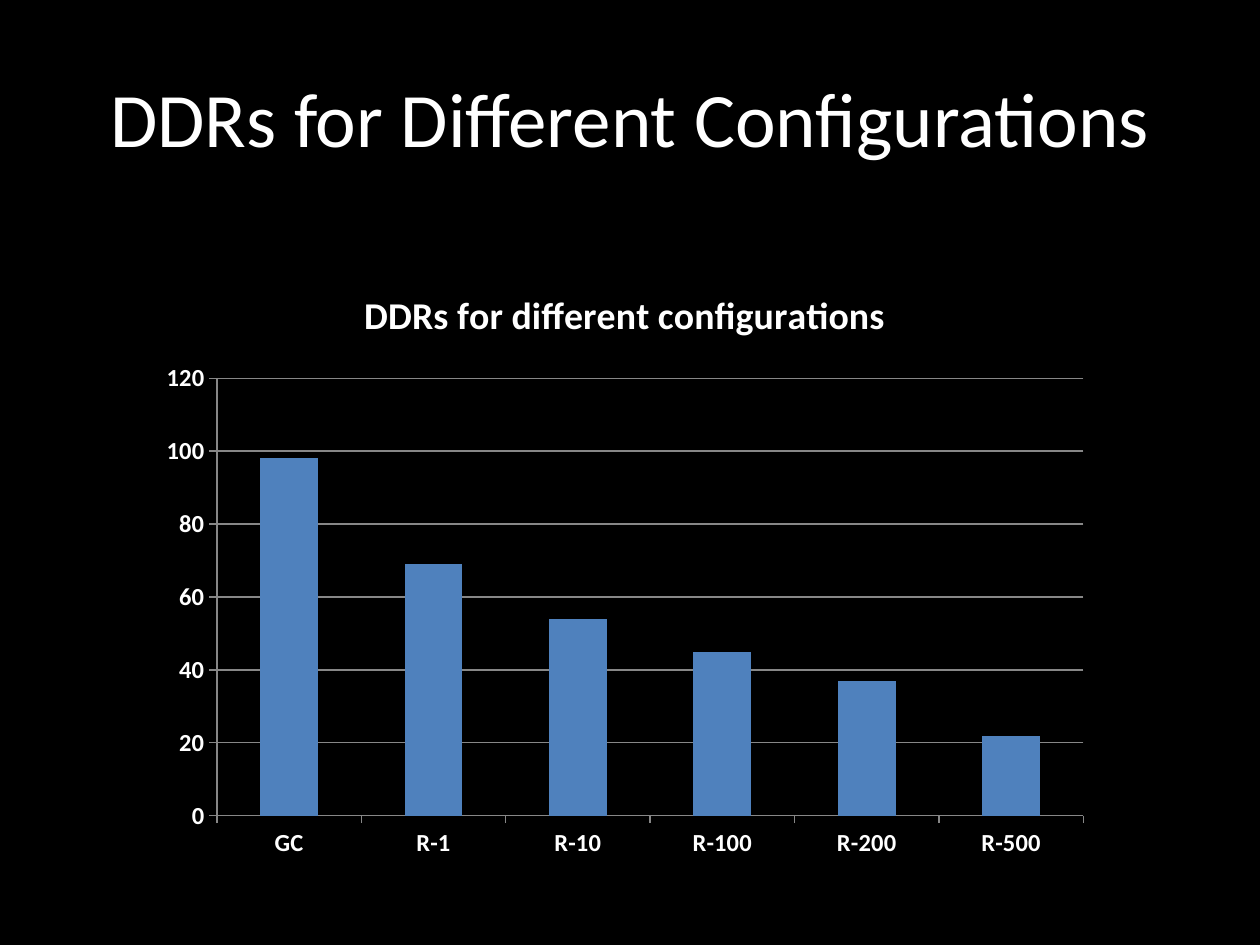
from pptx import Presentation
from pptx.chart.data import CategoryChartData
from pptx.dml.color import RGBColor
from pptx.enum.chart import XL_CHART_TYPE, XL_TICK_MARK
from pptx.enum.text import MSO_ANCHOR, PP_ALIGN
from pptx.util import Inches, Pt

COLUMNS = XL_CHART_TYPE.COLUMN_CLUSTERED
OUTSIDE = XL_TICK_MARK.OUTSIDE
CENTER, MIDDLE = PP_ALIGN.CENTER, MSO_ANCHOR.MIDDLE
FONT = "Calibri"
COLORS = {name: RGBColor.from_string(value) for name, value in {
    "back": "000000", "text": "FFFFFF", "bar": "4F81BD", "line": "878787"}.items()}


def style(font, size, bold):
    font.name, font.size, font.bold = FONT, Pt(size), bold
    font.color.rgb = COLORS["text"]


prs = Presentation()
prs.slide_width, prs.slide_height = Inches(10), Inches(7.5)
W, H = prs.slide_width, prs.slide_height
s = prs.slides.add_slide(prs.slide_layouts[5])
s.background.fill.solid()
s.background.fill.fore_color.rgb = COLORS["back"]

# Title
title = s.shapes.title
title.left, title.top = int(W * 0.05), int(H * 0.04)
title.width, title.height = int(W * 0.9), Inches(1.25)
tf = title.text_frame
tf.vertical_anchor = MIDDLE
p = tf.paragraphs[0]
p.alignment = CENTER
r = p.add_run()
r.text = "DDRs for Different Configurations"
style(r.font, 44, False)

# Column chart
name = "DDRs for different configurations"
data = CategoryChartData()
data.categories = ["GC", "R-1", "R-10", "R-100", "R-200", "R-500"]
data.add_series(name, [98, 69, 54, 45, 37, 22])
chart = s.shapes.add_chart(COLUMNS, Inches(1.17), Inches(2.08),
                           Inches(7.58), Inches(4.83), data).chart
style(chart.font, 18, True)
chart.has_legend = False
chart.has_title = True
r = chart.chart_title.text_frame.paragraphs[0].add_run()
r.text = name
style(r.font, 21.6, True)

# Bars
plot = chart.plots[0]
plot.gap_width = 150
plot.vary_by_categories = False
fill = plot.series[0].format.fill
fill.solid()
fill.fore_color.rgb = COLORS["bar"]

# Axes and gridlines
value_axis = chart.value_axis
value_axis.minimum_scale, value_axis.maximum_scale = 0, 120
value_axis.major_unit = 20
value_axis.has_major_gridlines = True
for axis in (chart.category_axis, value_axis):
    axis.major_tick_mark = OUTSIDE
    style(axis.tick_labels.font, 14, True)
for part in (chart.category_axis, value_axis, value_axis.major_gridlines):
    part.format.line.color.rgb = COLORS["line"]
    part.format.line.width = Pt(0.75)

prs.save("out.pptx")
